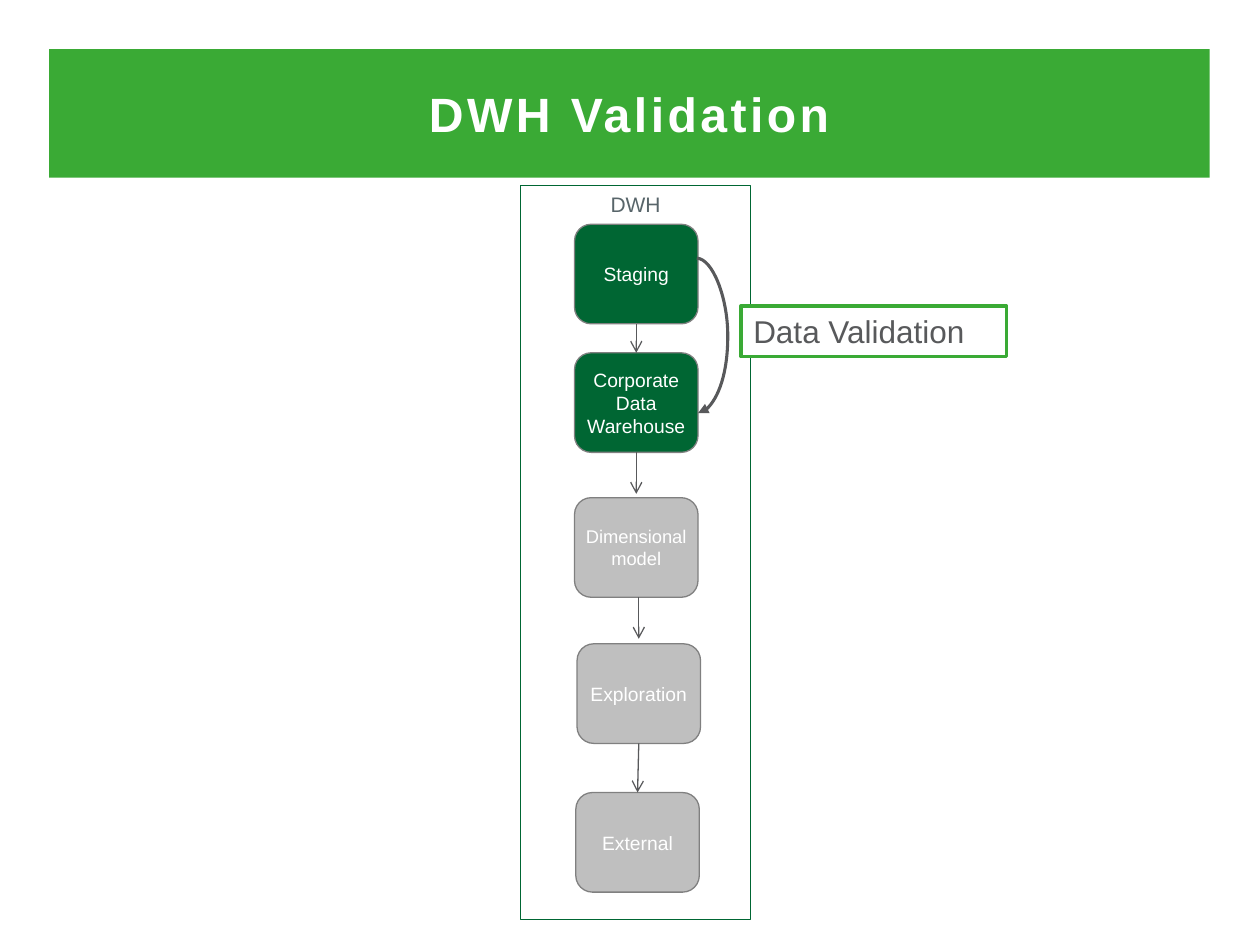
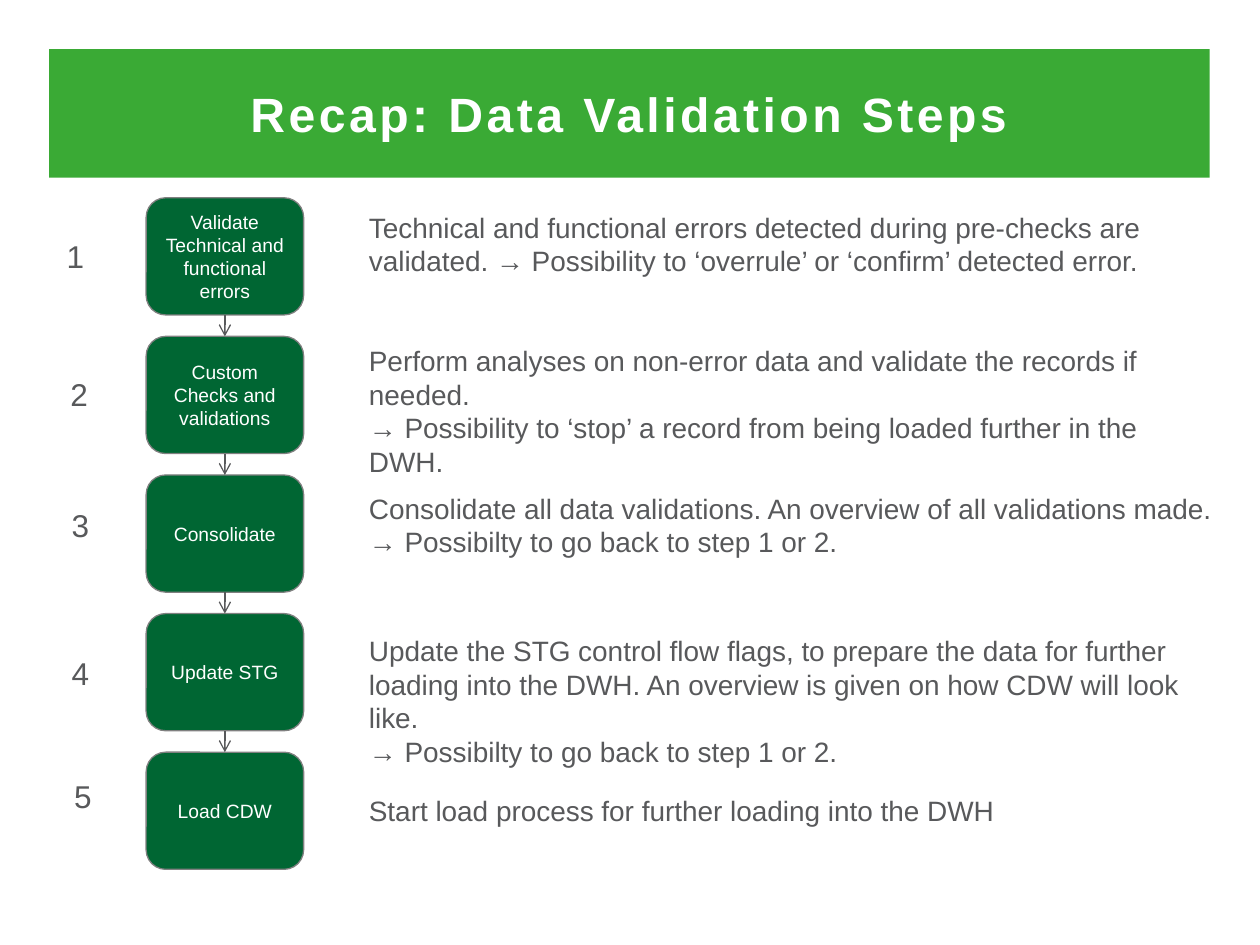
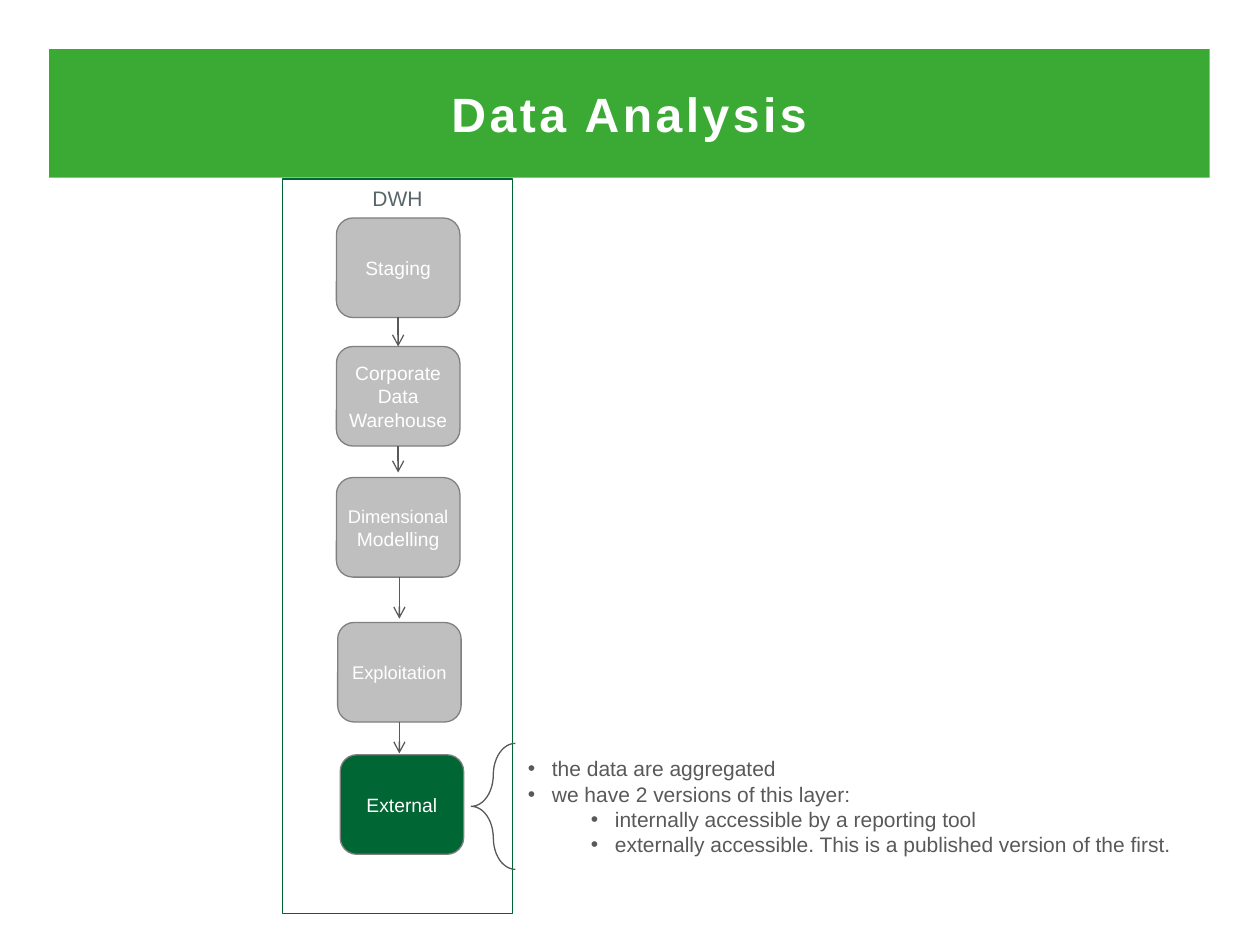
from lxml import etree
from pptx import Presentation
from pptx.dml.color import RGBColor
from pptx.enum.shapes import MSO_CONNECTOR as CONN, MSO_SHAPE as SHAPE
from pptx.enum.text import MSO_ANCHOR as ANCHOR, MSO_AUTO_SIZE as AUTO, PP_ALIGN as ALIGN
from pptx.oxml.ns import qn
from pptx.util import Inches, Pt

# Shared style
FONT = "Arial"
GREEN, DARK_GREEN = "3AAA35", "006633"
GREY, MID_GREY, LIGHT_GREY, SLATE = "58595B", "808080", "BFBFBF", "58656A"
WHITE = "FFFFFF"
BAND = (0.39, 0.39, 9.21, 1.02)
TITLE_ONLY, TITLE_AND_BODY = 5, 1
STAGE_W, STAGE_H = 0.98, 0.79
FRAME_W, FRAME_H = 1.83, 5.83


def rgb(color):
    return RGBColor.from_string(color)


def write(shape, paragraphs, size=11, color=GREY, bold=False, spacing=0, align=ALIGN.LEFT,
          anchor=ANCHOR.TOP, inset=None, wrap=True, auto=AUTO.NONE, bullets=False):
    """Fill a shape with (level, runs) paragraphs; runs are (text, size) pairs.

    A plain string stands for one level 0 paragraph in the given size.
    """
    tf = shape.text_frame
    tf.word_wrap, tf.auto_size, tf.vertical_anchor = wrap, auto, anchor
    if inset is not None:
        tf.margin_left = tf.margin_right = tf.margin_top = tf.margin_bottom = Inches(inset)
    for i, item in enumerate([paragraphs] if isinstance(paragraphs, str) else paragraphs):
        level, runs = (0, item) if isinstance(item, str) else item
        p = tf.add_paragraph() if i else tf.paragraphs[0]
        p.alignment, p.level = align, level
        p.space_before = Pt(0)
        if bullets:
            pPr = p._p.get_or_add_pPr()
            pPr.set("marL", str(Inches(0.19 + 0.5 * level)))
            pPr.set("indent", str(Inches(-0.19)))
            etree.SubElement(pPr, qn("a:buFont"), typeface=FONT)
            etree.SubElement(pPr, qn("a:buChar"), char="•")
        for text, run_size in [(runs, size)] if isinstance(runs, str) else runs:
            r = p.add_run()
            r.text = text
            r.font.name, r.font.size, r.font.bold = FONT, Pt(run_size), bold
            r.font.color.rgb = rgb(color)
            if spacing:
                r._r.get_or_add_rPr().set("spc", str(spacing * 100))


def place(shape, x, y, w, h):
    shape.left, shape.top, shape.width, shape.height = map(Inches, (x, y, w, h))


class Deck:
    def __init__(self):
        self.prs = Presentation()
        self.prs.slide_width, self.prs.slide_height = Inches(10), Inches(7.5)
        self.s = None

    def slide(self, title, layout=TITLE_ONLY):
        self.s = self.prs.slides.add_slide(self.prs.slide_layouts[layout])
        sp = self.s.shapes.title
        place(sp, *BAND)
        sp.fill.solid()
        sp.fill.fore_color.rgb = rgb(GREEN)
        write(sp, title, size=27.5, color=WHITE, bold=True, spacing=2,
              align=ALIGN.CENTER, anchor=ANCHOR.MIDDLE)

    def shape(self, kind, x, y, w, h, fill=None, line=GREY, weight=0.75):
        sp = self.s.shapes.add_shape(kind, *map(Inches, (x, y, w, h)))
        sp.shadow.inherit = False
        if fill:
            sp.fill.solid()
            sp.fill.fore_color.rgb = rgb(fill)
        else:
            sp.fill.background()
        sp.line.color.rgb, sp.line.width = rgb(line), Pt(weight)
        return sp

    def node(self, label, x, y, w, h, fill):
        sp = self.shape(SHAPE.ROUNDED_RECTANGLE, x, y, w, h, fill, MID_GREY)
        write(sp, label, color=WHITE, align=ALIGN.CENTER, anchor=ANCHOR.MIDDLE, inset=0.04)
        return sp

    def text(self, paragraphs, x, y, w, h, **fmt):
        sp = self.s.shapes.add_textbox(*map(Inches, (x, y, w, h)))
        write(sp, paragraphs, auto=AUTO.SHAPE_TO_FIT_TEXT, **fmt)

    def connector(self, kind, x1, y1, x2, y2, weight=0.75, head="arrow"):
        c = self.s.shapes.add_connector(kind, x1, y1, x2, y2)
        c.line.color.rgb, c.line.width = rgb(GREY), Pt(weight)
        spPr = c._element.spPr
        etree.SubElement(spPr.find(qn("a:ln")), qn("a:tailEnd"), type=head)
        etree.SubElement(spPr, qn("a:effectLst"))
        return c

    def arrow(self, upper, lower, gap=0, x=None):
        """Point down from upper to lower, stopping short by gap; x moves the arrow sideways."""
        middle = upper.left + upper.width // 2
        x = middle if x is None else Inches(x)
        c = self.connector(CONN.STRAIGHT, x, upper.top + upper.height, x, lower.top - Inches(gap))
        if x == middle:
            c.begin_connect(upper, 2)
        if not gap:
            c.end_connect(lower, 0)

    def warehouse(self, x, y, stages):
        """Draw the DWH frame and its stages: label, x, y, active, arrow options."""
        frame = self.shape(SHAPE.RECTANGLE, x, y, FRAME_W, FRAME_H, line=DARK_GREEN)
        write(frame, "DWH", size=12, color=SLATE, align=ALIGN.CENTER)
        above = None
        for label, left, top, active, arrow in stages:
            sp = self.node(label, left, top, STAGE_W, STAGE_H,
                           DARK_GREEN if active else LIGHT_GREY)
            if above is not None:
                self.arrow(above, sp, **arrow)
            above = sp


def validation_slide(d):
    d.slide("DWH Validation")
    d.warehouse(4.13, 1.47, [
        ("Staging", 4.56, 1.78, True, {}),
        ("Corporate Data Warehouse", 4.56, 2.8, True, {}),
        ([(0, [("Dimensional model", 10.5)])], 4.56, 3.95, False, {"gap": 0.03}),
        ("Exploration", 4.58, 5.11, False, {"gap": 0.04, "x": 5.07}),
        ("External", 4.57, 6.29, False, {}),
    ])

    # Callout and the curve from staging to the warehouse
    callout = d.shape(SHAPE.RECTANGLE, 5.88, 2.43, 2.11, 0.4, WHITE, GREEN, 2)
    write(callout, "Data Validation", size=18)
    curve = d.connector(CONN.CURVE, *map(Inches, (5.53, 2.05, 5.54, 3.28)),
                        weight=1.75, head="triangle")
    guides = curve._element.spPr.find(qn("a:prstGeom")).get_or_add_avLst()
    etree.SubElement(guides, qn("a:gd"), name="adj1", fmla="val 2500000")


def steps_slide(d):
    d.slide("Recap: Data Validation Steps")
    back = "→ Possibilty to go back to step 1 or 2."
    # Box label, number position, description top and height, description
    steps = [
        ("Validate Technical and functional errors", 0.43, 1.83, 1.62, 0.64,
         ["Technical and functional errors detected during pre-checks are validated. "
          "→ Possibility to ‘overrule’ or ‘confirm’ detected error."]),
        ("Custom Checks and validations", 0.46, 2.93, 2.68, 0.64,
         ["Perform analyses on non-error data and validate the records if needed.",
          "→ Possibility to ‘stop’ a record from being loaded further in the DWH."]),
        ("Consolidate", 0.47, 3.97, 3.85, 0.64,
         ["Consolidate all data validations. An overview of all validations made.", back]),
        ("Update STG", 0.47, 5.14, 4.98, 0.91,
         ["Update the STG control flow flags, to prepare the data for further loading "
          "into the DWH. An overview is given on how CDW will look like.", back]),
        ("Load CDW", 0.49, 6.12, 6.25, 0.37,
         ["Start load process for further loading into the DWH"]),
    ]
    above = None
    for i, (label, num_x, num_y, top, height, description) in enumerate(steps):
        sp = d.node(label, 1.16, 1.57 + 1.1 * i, 1.25, 0.93, DARK_GREEN)
        if above is not None:
            d.arrow(above, sp)
        above = sp
        d.text(str(i + 1), num_x, num_y, 0.33, 0.4, size=18, wrap=False)
        d.text(description, 2.83, top, 6.93, height, size=16)


def analysis_slide(d):
    d.slide("Data Analysis", TITLE_AND_BODY)
    d.warehouse(2.24, 1.42, [
        ("Staging", 2.67, 1.73, False, {}),
        ("Corporate Data Warehouse", 2.67, 2.75, False, {}),
        ([(0, [("Dimensional", 10.5), (" Modelling", 11)])], 2.67, 3.79, False, {"gap": 0.04}),
        ([(0, [("Exploitation", 10.5)])], 2.68, 4.94, False, {"gap": 0.03, "x": 3.17}),
        ("External", 2.7, 5.99, True, {"gap": 0.01}),
    ])

    # Notes on the external layer
    body = d.s.placeholders[1]
    place(body, 4.09, 5.95, 5.41, 0.91)
    write(body, [
        "the data are aggregated",
        "we have 2 versions of this layer:",
        (1, "internally accessible by a reporting tool"),
        (1, "externally accessible. This is a published version of the first."),
    ], size=12, bullets=True)
    brace = d.shape(SHAPE.LEFT_BRACE, 3.74, 5.9, 0.35, 1)
    brace.adjustments[0] = 0.72


def main():
    d = Deck()
    validation_slide(d)
    steps_slide(d)
    analysis_slide(d)
    d.prs.save("out.pptx")


if __name__ == "__main__":
    main()
